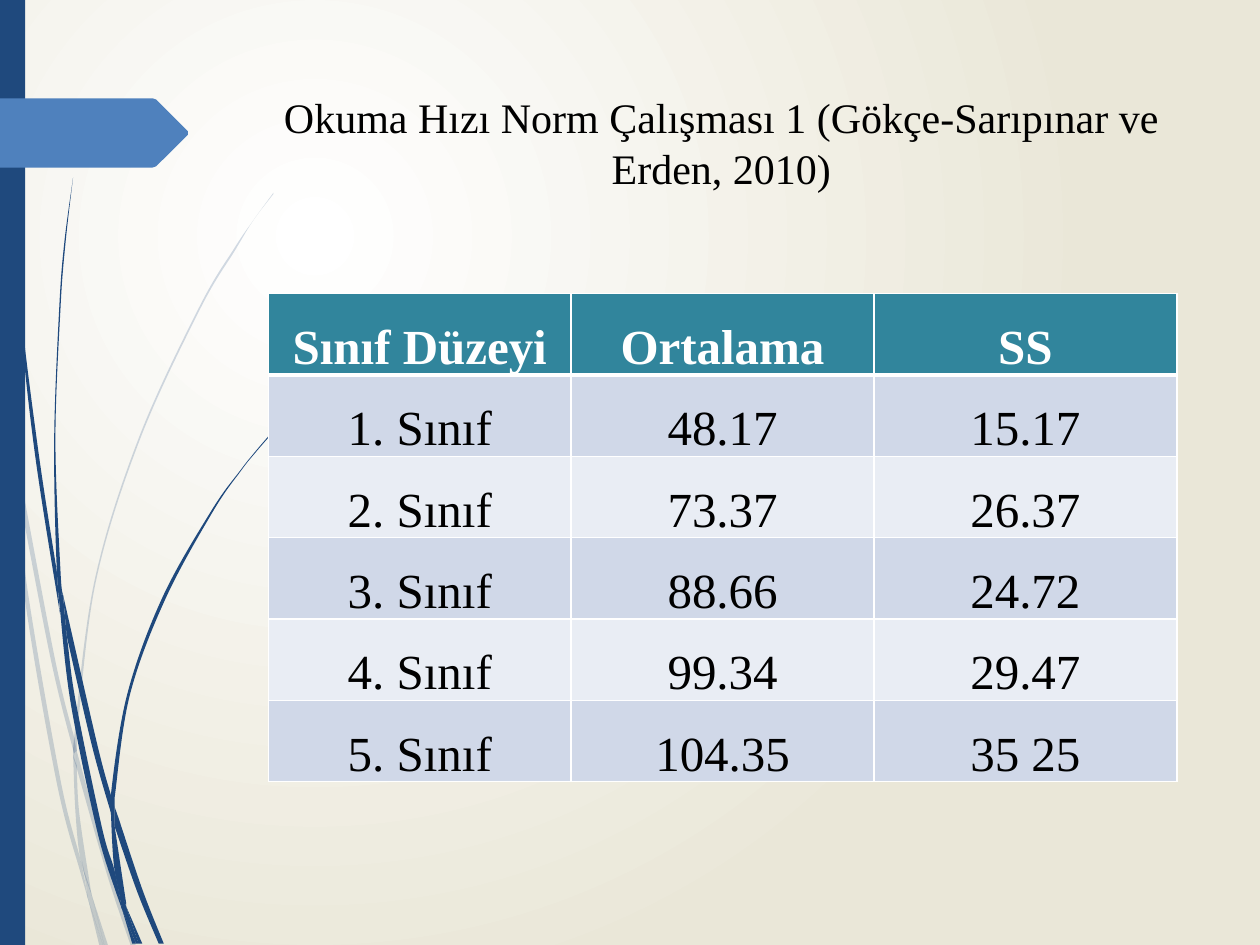
from lxml import etree
from pptx import Presentation
from pptx.dml.color import RGBColor
from pptx.enum.shapes import MSO_SHAPE
from pptx.enum.text import MSO_ANCHOR, MSO_AUTO_SIZE, PP_ALIGN
from pptx.oxml import parse_xml
from pptx.oxml.ns import nsdecls, qn
from pptx.util import Inches, Pt

COLORS = {
    "navy": "1F497D", "blue": "4F81BD", "teal": "31859C",
    "band": "D0D8E8", "light_band": "E9EDF4",
    "white": "FFFFFF", "black": "000000", "sand": "EAE7D8",
}
RGB = {name: RGBColor.from_string(value) for name, value in COLORS.items()}
FONT = "Times New Roman"


def add_outline(shapes, points, color, opacity=100):
    corners = [(Inches(x), Inches(y)) for x, y in points]
    builder = shapes.build_freeform(*corners[0])
    builder.add_line_segments(corners[1:], close=True)
    shape = builder.convert_to_shape()
    shape.shadow.inherit = False
    shape.line.fill.background()
    shape.fill.solid()
    shape.fill.fore_color.rgb = RGB[color]
    if opacity < 100:
        tint = shape.element.spPr.find(qn("a:solidFill"))[0]
        etree.SubElement(tint, qn("a:alpha")).set("val", str(opacity * 1000))
    return shape


def bend_edge(lines, points):
    """Turn the straight segments between the points into one smooth curve."""
    padded = [points[0], *points, points[-1]]
    for line, a, b, c, d in zip(lines, padded, padded[1:], padded[2:], padded[3:]):
        handles = ([q + (r - p) / 6 for p, q, r in zip(a, b, c)],
                   [r - (s - q) / 6 for q, r, s in zip(b, c, d)])
        curve = etree.Element(qn("a:cubicBezTo"))
        for x, y in (*handles, c):
            etree.SubElement(curve, qn("a:pt"), x=str(round(x)), y=str(round(y)))
        line.getparent().replace(line, curve)


deck = Presentation()
deck.slide_width, deck.slide_height = Inches(10), Inches(7.5)
page = deck.slides.add_slide(deck.slide_layouts[5])

# Background: radial gradient
backdrop = page.background.fill
backdrop.gradient()
for stop, color in zip(backdrop.gradient_stops, ("white", "sand")):
    stop.color.rgb = RGB[color]
gradient = next(page.element.iter(qn("a:gradFill")))
gradient.replace(gradient.find(qn("a:lin")), parse_xml(
    f'<a:path {nsdecls("a")} path="circle">'
    '<a:fillToRect l="50000" t="50000" r="100000" b="100000"/></a:path>'))

# Grass blades: each is one edge down and one edge back
pale_blades = [
    ([(0, 2.82), (0.06, 3.22), (0.08, 3.5)], [(0.07, 3.44), (0, 2.99)]),
    ([(0.1, 3.45), (0.43, 5.2), (0.59, 5.86)], [(0.59, 5.99), (0.4, 5.22), (0.12, 3.76)]),
    ([(0.61, 5.96), (0.64, 6.07), (0.88, 6.92), (1.08, 7.51)],
     [(1.04, 7.51), (0.85, 6.94), (0.61, 6.1)]),
    ([(0.73, 7.11), (0.86, 7.51)], [(0.83, 7.51)]),
    ([(0.08, 3.5), (0.12, 3.76), (0.22, 4.69), (0.48, 6.19), (0.64, 6.83), (0.7, 7.14)],
     [(0.64, 6.93), (0.45, 6.21), (0.19, 4.7), (0.08, 3.5)]),
    ([(0.58, 5.99), (0.6, 6.46), (0.64, 6.83), (0.73, 7.11)],
     [(0.72, 7.06), (0.63, 6.46), (0.61, 6.1), (0.61, 6.08)]),
    ([(2.17, 1.53), (2.01, 1.75), (1.86, 1.97), (1.58, 2.44), (1.1, 3.48), (0.75, 4.61),
      (0.59, 5.84), (0.61, 5.96)],
     [(0.61, 5.84), (0.76, 4.62), (1.11, 3.49), (1.59, 2.45), (1.87, 1.98), (2.01, 1.75),
      (2.17, 1.54)]),
    ([(0.7, 7.14), (0.79, 7.51)], [(0.82, 7.51)]),
    ([(0.59, 5.86), (0.58, 5.99), (0.61, 6.1)], [(0.61, 5.96)]),
    ([(0.65, 6.83), (0.69, 7.07), (0.7, 7.14), (0.82, 7.51)],
     [(0.83, 7.51), (0.73, 7.11), (0.67, 6.92)]),
]
dark_blades = [
    ([(0.02, 0), (0.03, 0.48), (0.05, 1.1), (0.14, 2.33), (0.27, 3.55), (0.46, 4.77), (0.47, 4.81)],
     [(0.45, 4.53), (0.3, 3.55), (0.15, 2.32), (0.06, 1.09), (0.04, 0.48), (0.03, 0)]),
    ([(0.5, 4.72), (0.77, 5.9), (0.88, 6.31)], [(0.88, 6.45), (0.73, 5.92), (0.53, 5.05)]),
    ([(0.91, 6.41), (0.94, 6.49), (1.13, 7.06), (1.3, 7.49)],
     [(1.26, 7.49), (1.09, 7.08), (0.91, 6.56)]),
    ([(0.47, 4.77), (0.53, 5.05), (0.6, 5.56), (0.81, 6.57), (0.91, 6.91), (0.97, 7.22)],
     [(0.92, 7.08), (0.77, 6.59), (0.56, 5.57), (0.47, 4.77)]),
    ([(0.58, 1.41), (0.51, 1.93), (0.47, 2.45), (0.43, 3.49), (0.45, 4.49), (0.49, 4.72)],
     [(0.5, 4.72), (0.48, 4.53), (0.44, 3.49), (0.48, 2.45), (0.52, 1.93), (0.58, 1.41)]),
    ([(1, 7.19), (1.1, 7.49)], [(1.13, 7.49)]),
    ([(0.45, 4.49), (0.47, 4.77), (0.53, 5.05)], [(0.5, 4.72), (0.49, 4.72)]),
    ([(2.15, 3.44), (2.03, 3.58), (1.91, 3.73), (1.68, 4.05), (1.29, 4.74), (1.01, 5.51),
      (0.88, 6.31), (0.91, 6.41)],
     [(0.91, 6.33), (1.03, 5.52), (1.31, 4.76), (1.69, 4.06), (1.91, 3.74), (2.03, 3.59),
      (2.16, 3.44)]),
    ([(0.97, 7.22), (1.05, 7.49)], [(1.08, 7.49)]),
    ([(0.88, 6.45), (0.91, 6.91), (1, 7.19)], [(1, 7.16), (0.91, 6.56), (0.9, 6.51)]),
    ([(0.88, 6.31), (0.88, 6.45), (0.91, 6.56)], [(0.91, 6.41)]),
    ([(0.91, 6.91), (0.96, 7.17), (0.97, 7.22), (1.08, 7.49)],
     [(1.1, 7.49), (1, 7.19), (0.96, 7.06)]),
]
decorations = []
for blades, opacity in ((pale_blades, 20), (dark_blades, 100)):
    group = page.shapes.add_group_shape()
    for down, back in blades:
        blade = add_outline(group.shapes, down + back, "navy", opacity)
        outline = next(blade.element.iter(qn("a:path")))
        points = [(int(pt.get("x")), int(pt.get("y"))) for pt in outline.iter(qn("a:pt"))]
        lines = outline.findall(qn("a:lnTo"))
        turn = len(down)
        bend_edge(lines[:turn - 1], points[:turn])
        bend_edge(lines[turn:], points[turn:turn + len(back)])
    decorations.append(group)

# Side bar and arrow tab
bar = page.shapes.add_shape(MSO_SHAPE.RECTANGLE, 0, 0, Inches(0.2), Inches(7.5))
bar.shadow.inherit = False
bar.fill.solid()
bar.fill.fore_color.rgb = RGB["navy"]
bar.line.fill.background()
tab = add_outline(page.shapes, [
    (0, 0.78), (1.21, 0.78), (1.24, 0.79), (1.49, 1.04), (1.49, 1.07),
    (1.24, 1.32), (1.21, 1.33), (0, 1.33)], "blue")
decorations += [bar, tab]

# The decoration belongs to the slide master, behind its placeholders
master_tree = deck.slide_master.element.cSld.spTree
for position, shape in enumerate(decorations, start=2):
    master_tree.insert(position, shape.element)

# Title
title = page.shapes.title
title.left, title.top, title.width, title.height = map(Inches, (2.12, 0.68, 7.21, 1.4))
frame = title.text_frame
frame.text = "Okuma Hızı Norm Çalışması 1 (Gökçe-Sarıpınar ve Erden, 2010)"
frame.word_wrap = True
frame.auto_size = MSO_AUTO_SIZE.NONE
frame.vertical_anchor = MSO_ANCHOR.TOP
para = frame.paragraphs[0]
para.alignment = PP_ALIGN.CENTER
span = para.runs[0]
span.font.name, span.font.size = FONT, Pt(24)
span.font.color.rgb = RGB["black"]

# Reading speed table
rows = [
    ("Sınıf Düzeyi", "Ortalama", "SS"),
    ("1. Sınıf", "48.17", "15.17"),
    ("2. Sınıf", "73.37", "26.37"),
    ("3. Sınıf", "88.66", "24.72"),
    ("4. Sınıf", "99.34", "29.47"),
    ("5. Sınıf", "104.35", "35 25"),
]
holder = page.shapes.add_table(len(rows), 3, Inches(2.13), Inches(2.33), Inches(7.21), Inches(4.2))
table = holder.table
for row_index, row in enumerate(rows):
    table.rows[row_index].height = Inches(0.41)
    header = row_index == 0
    fill = "teal" if header else ("light_band", "band")[row_index % 2]
    for column_index, value in enumerate(row):
        cell = table.cell(row_index, column_index)
        cell.margin_left = cell.margin_right = Inches(0.06)
        cell.margin_top = cell.margin_bottom = 0
        # White borders, thick around the header's lower edge
        for side in "LRTB":
            thick = (header and side == "B") or (row_index == 1 and side == "T")
            cell._tc.get_or_add_tcPr().append(parse_xml(
                f'<a:ln{side} {nsdecls("a")} w="{Pt(3 if thick else 1)}"><a:solidFill>'
                f'<a:srgbClr val="{COLORS["white"]}"/></a:solidFill></a:ln{side}>'))
        cell.fill.solid()
        cell.fill.fore_color.rgb = RGB[fill]
        cell.text_frame.text = value
        para = cell.text_frame.paragraphs[0]
        para.alignment = PP_ALIGN.CENTER
        para.line_spacing = 1.5
        span = para.runs[0]
        span.font.name, span.font.size, span.font.bold = FONT, Pt(28), header
        span.font.color.rgb = RGB["white" if header else "black"]
holder.height = Inches(4.2)

deck.save("out.pptx")
